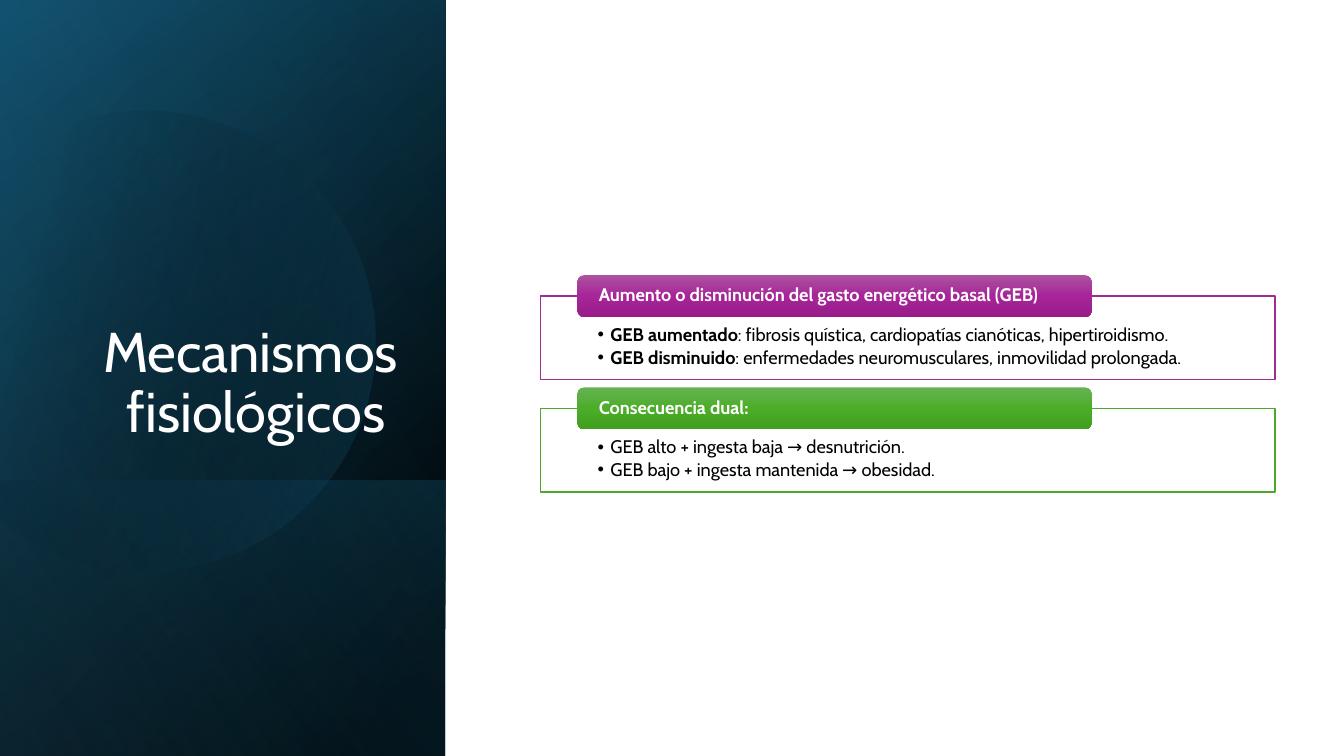
from lxml.etree import SubElement as Sub
from pptx import Presentation
from pptx.dml.color import RGBColor as RGB
from pptx.enum.shapes import MSO_SHAPE as SHAPE
from pptx.enum.text import MSO_ANCHOR as ANCHOR, PP_ALIGN as ALIGN
from pptx.oxml.ns import qn
from pptx.util import Pt

WHITE, BLACK = RGB(255, 255, 255), RGB(0, 0, 0)
NAVY, TEAL, SKY = RGB(0x10, 0x48, 0x62), RGB(0x15, 0x60, 0x82), RGB(0x46, 0xB1, 0xE1)
PLUM, GREEN = RGB(0xA0, 0x2B, 0x93), RGB(0x4E, 0xA7, 0x2E)
PLUMS = [RGB(0xAC, 0x53, 0xA0), RGB(0xA6, 0x25, 0x98), RGB(0x99, 0x1C, 0x8B)]
GREENS = [RGB(0x66, 0xB3, 0x54), RGB(0x4B, 0xAD, 0x28), RGB(0x40, 0x9F, 0x1E)]
FONT = "Cabin"
WIDE, HIGH, SIDE = 960, 540, 318.25

TITLE = "Mecanismos fisiológicos "
CARDS = [
    ("Aumento o disminución del gasto energético basal (GEB)", PLUM, PLUMS, [
        ("GEB aumentado", ": fibrosis quística, cardiopatías cianóticas, hipertiroidismo."),
        ("GEB disminuido", ": enfermedades neuromusculares, inmovilidad prolongada.")]),
    ("Consecuencia dual:", GREEN, GREENS, [
        ("", "GEB alto + ingesta baja → desnutrición."),
        ("", "GEB bajo + ingesta mantenida → obesidad.")]),
]
BASE = (0, HIGH, 50, [(8, BLACK, 100), (100, NAVY, 100)])
SHADE = (0, HIGH, 30, [(0, BLACK, 0), (99, TEAL, 46)])
FOOT = (342.9, 197.1, 130, [(2, TEAL, 29), (100, BLACK, 30)])
GLOW = (0, HIGH, 120, [(0, BLACK, 0), (99, SKY, 11)])
DISC = [(29, BLACK, 0), (100, TEAL, 43)]
START = (191.9, 7.3)
EDGES = [
    [(258.6, 28.1), (307.2, 90.7), (307.2, 164.5)],
    [(307.2, 255.4), (233.5, 329), (142.6, 329)],
    [(85.7, 329), (35.6, 300.2), (6.2, 256.4)],
    [(0, 246.5)],
    [(65.5, 19.6)],
    [(78.7, 12.9)],
    [(98.4, 4.3), (119.9, 0), (142.3, 0)],
    [(159.6, 0), (176, 2.7), START],
]


def blend(shape, angle, stops):
    shape.shadow.inherit = False
    shape.fill.gradient()
    grad = shape.element.spPr.find(qn("a:gradFill"))
    for child in list(grad):
        grad.remove(child)
    group = Sub(grad, qn("a:gsLst"))
    for place, color, alpha in stops:
        stop = Sub(group, qn("a:gs"), pos=str(place * 1000))
        tint = Sub(stop, qn("a:srgbClr"), val=str(color))
        Sub(tint, qn("a:alpha"), val=str(alpha * 1000))
    Sub(grad, qn("a:lin"), ang=str(angle * 60000), scaled="0")
    shape.line.fill.background()


def panel(top, high, angle, stops):
    left, mid = (SIDE - high) / 2, top + high / 2
    shape = shapes.add_shape(SHAPE.RECTANGLE, Pt(left), Pt(mid - SIDE / 2),
                             Pt(high), Pt(SIDE))
    shape.rotation = 90
    shape.element.spPr.xfrm.set("flipH", "1")
    blend(shape, angle, stops)


def disc():
    form = shapes.build_freeform(Pt(START[0]), Pt(START[1]), scale=1.0)
    ends = [edge[-1] for edge in EDGES]
    form.add_line_segments([(Pt(x), Pt(y)) for x, y in ends], close=True)
    shape = form.convert_to_shape(Pt(-39.6), Pt(76.3))
    shape.rotation = 343.9
    lines = list(shape.element.iter(qn("a:lnTo")))
    for line, edge in zip(lines, EDGES):
        if len(edge) == 3:
            curve = Sub(line.getparent(), qn("a:cubicBezTo"))
            line.getparent().replace(line, curve)
            for x, y in edge:
                Sub(curve, qn("a:pt"), x=str(Pt(x)), y=str(Pt(y)))
    blend(shape, 30, DISC)


def write(left, top, wide, high, pads, anchor):
    text = shapes.add_textbox(Pt(left), Pt(top), Pt(wide), Pt(high)).text_frame
    text.word_wrap = True
    text.margin_left, text.margin_top = Pt(pads[0]), Pt(pads[1])
    text.margin_right, text.margin_bottom = Pt(pads[0]), Pt(pads[2])
    text.vertical_anchor = anchor
    return text


def style(para, size, color, align=ALIGN.LEFT):
    para.alignment, para.line_spacing = align, 0.9
    for run in para.runs:
        run.font.name, run.font.size = FONT, Pt(size)
        run.font.color.rgb = color


def card(top, head, color, tones, items):
    place = (386, top, 524.7, 59.8)
    box = shapes.add_shape(SHAPE.RECTANGLE, *map(Pt, place))
    box.shadow.inherit = False
    box.fill.solid()
    box.fill.fore_color.rgb = WHITE
    box.line.color.rgb, box.line.width = color, Pt(1)
    text = write(*place, (41, 21.3, 7), ANCHOR.TOP)
    for i, (term, rest) in enumerate(items):
        para = text.add_paragraph() if i else text.paragraphs[0]
        if term:
            para.text = term
            para.runs[0].font.bold = True
        para.add_run().text = rest
        style(para, 13, BLACK)
        para.space_after = Pt(1.95)
        props = para._p.get_or_add_pPr()
        props.set("marL", str(Pt(9)))
        props.set("indent", str(Pt(-9)))
        Sub(props, qn("a:buFont"), typeface="Arial")
        Sub(props, qn("a:buChar"), char="•")
    tab = shapes.add_shape(SHAPE.ROUNDED_RECTANGLE, Pt(412.5), Pt(top - 15),
                           Pt(367.3), Pt(30))
    blend(tab, 90, [(i * 50, tone, 100) for i, tone in enumerate(tones)])
    text = write(414, top - 13.6, 364.4, 27.2, (13.7, 0, 0), ANCHOR.MIDDLE)
    text.text = head
    style(text.paragraphs[0], 13, WHITE)
    text.paragraphs[0].runs[0].font.bold = True


deck = Presentation()
deck.slide_width, deck.slide_height = Pt(WIDE), Pt(HIGH)
shapes = deck.slides.add_slide(deck.slide_layouts[6]).shapes

for part in (BASE, SHADE, FOOT):
    panel(*part)
disc()
panel(*GLOW)

text = write(46, 132.7, 245.3, 188.6, (7.2, 3.6, 3.6), ANCHOR.BOTTOM)
text.text = TITLE
style(text.paragraphs[0], 40, WHITE, ALIGN.RIGHT)

for i, item in enumerate(CARDS):
    card(211.5 + i * 80.2, *item)

deck.save("out.pptx")
